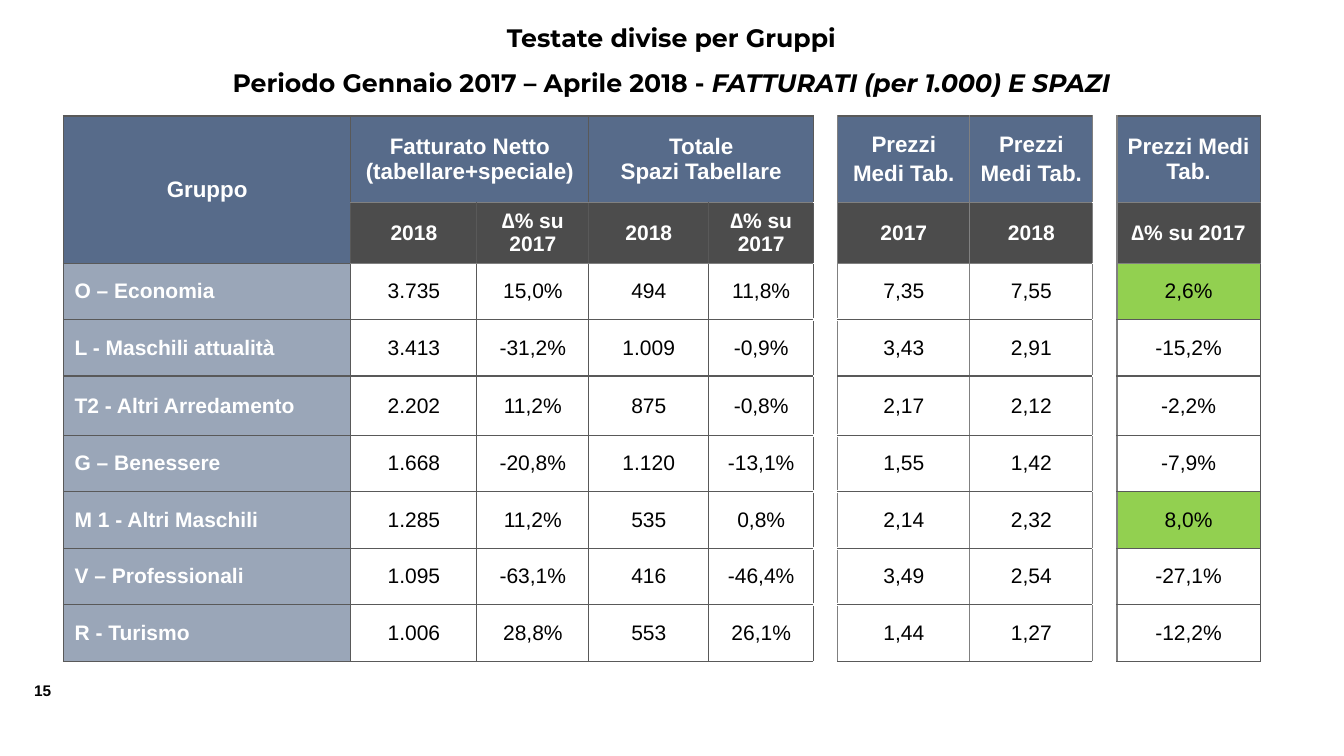
"""Builds the slide with turnover, space and average prices by magazine group."""
from lxml.etree import SubElement
from pptx import Presentation
from pptx.dml.color import RGBColor
from pptx.enum.text import MSO_ANCHOR, PP_ALIGN
from pptx.oxml import parse_xml
from pptx.oxml.ns import nsdecls, qn
from pptx.util import Inches, Pt

BLUE, DARK, GREEN, WHITE, BLACK = "576B8A", "000000", "92D050", "FFFFFF", "000000"
LINE, SOFT_LINE = "595959", "808080"
GAPS = (5, 8)


def style(runs, size, color, bold=True, font="Arial"):
    """Format the given runs."""
    for run in runs:
        run.font.name = font
        run.font.size = Pt(size)
        run.font.bold = bold
        run.font.color.rgb = RGBColor.from_string(color)


def paint(cell, color, opacity=100):
    """Fill a cell, partly transparent if asked."""
    cell.fill.solid()
    cell.fill.fore_color.rgb = RGBColor.from_string(color)
    if opacity < 100:
        tone = cell.fill._xPr.find(qn("a:solidFill"))[0]
        SubElement(tone, qn("a:alpha")).set("val", str(opacity * 1000))


prs = Presentation()
prs.slide_width, prs.slide_height = Inches(13.33), Inches(7.5)
slide = prs.slides.add_slide(prs.slide_layouts[6])

heading = slide.shapes.add_textbox(Inches(1.11), Inches(0.02), Inches(11.1), Inches(1.07)).text_frame
heading.word_wrap = True
heading.text = "Testate divise per Gruppi\nPeriodo Gennaio 2017 – Aprile 2018 - "
heading.paragraphs[1].add_run().text = "FATTURATI (per 1.000) E SPAZI"
for line in heading.paragraphs:
    line.alignment = PP_ALIGN.CENTER
    line.line_spacing = 1.5
    style(line.runs, 18, BLACK, font="Montserrat")
heading.paragraphs[1].runs[1].font.italic = True

page_number = slide.shapes.add_textbox(Inches(0.24), Inches(6.71), Inches(0.42), Inches(0.29)).text_frame
page_number.word_wrap = False
page_number.text = "15"
style(page_number.paragraphs[0].runs, 11, BLACK)

rows = [
    ["Gruppo", "Fatturato Netto (tabellare+speciale)", "", "Totale\nSpazi Tabellare", "", "",
     "Prezzi\nMedi Tab.", "Prezzi\nMedi Tab.", "", "Prezzi Medi Tab."],
    ["", "2018", "∆% su 2017", "2018", "∆% su 2017", "", "2017", "2018", "", "∆% su 2017"],
    ["O – Economia", "3.735", "15,0%", "494", "11,8%", "", "7,35", "7,55", "", "2,6%"],
    ["L - Maschili attualità", "3.413", "-31,2%", "1.009", "-0,9%", "", "3,43", "2,91", "", "-15,2%"],
    ["T2 - Altri Arredamento", "2.202", "11,2%", "875", "-0,8%", "", "2,17", "2,12", "", "-2,2%"],
    ["G – Benessere", "1.668", "-20,8%", "1.120", "-13,1%", "", "1,55", "1,42", "", "-7,9%"],
    ["M 1 - Altri Maschili", "1.285", "11,2%", "535", "0,8%", "", "2,14", "2,32", "", "8,0%"],
    ["V – Professionali", "1.095", "-63,1%", "416", "-46,4%", "", "3,49", "2,54", "", "-27,1%"],
    ["R - Turismo", "1.006", "28,8%", "553", "26,1%", "", "1,44", "1,27", "", "-12,2%"],
]
widths = [2.85, 1.25, 1.11, 1.19, 1.04, 0.24, 1.31, 1.22, 0.24, 1.42]
heights = [0.86, 0.6, 0.56, 0.56, 0.59, 0.56, 0.56, 0.56, 0.56]

table = slide.shapes.add_table(len(rows), len(widths), Inches(0.63), Inches(1.15),
                               Inches(11.86), Inches(5.4)).table
table.first_row = table.horz_banding = False
for column, width in zip(table.columns, widths):
    column.width = Inches(width)
for table_row, height in zip(table.rows, heights):
    table_row.height = Inches(height)
table.cell(0, 0).merge(table.cell(1, 0))
table.cell(0, 1).merge(table.cell(0, 2))
table.cell(0, 3).merge(table.cell(0, 4))

for r, values in enumerate(rows):
    for c, value in enumerate(values):
        cell = table.cell(r, c)
        is_header, is_label, is_gap = r < 2, c == 0, c in GAPS
        cell.vertical_anchor = MSO_ANCHOR.MIDDLE
        if not is_header:
            cell.margin_left = Inches(0.11 if is_label else 0)
            cell.margin_right = cell.margin_top = cell.margin_bottom = 0

        if value:
            cell.text_frame.text = value
        for i, paragraph in enumerate(cell.text_frame.paragraphs):
            paragraph.alignment = PP_ALIGN.LEFT if is_label and not is_header else PP_ALIGN.CENTER
            if i and c > 5:
                paragraph.space_before = Pt(3)
            bold = is_header or is_label
            style(paragraph.runs, 16 if r == 0 else 15, WHITE if bold else BLACK, bold)

        if is_gap:
            paint(cell, WHITE)
        elif r == 0 or is_header and is_label:
            paint(cell, BLUE)
        elif is_header:
            paint(cell, DARK, 70)
        elif is_label:
            paint(cell, BLUE, 60)
        elif c == 9 and not value.startswith("-"):
            paint(cell, GREEN)
        else:
            cell.fill.background()

        borders = []
        for tag, edge in (("lnL", c), ("lnR", c + 1)):
            borders.append((tag, SOFT_LINE if 6 <= edge <= 9 else LINE, 1))
        for tag, edge in (("lnT", r), ("lnB", r + 1)):
            color = WHITE if is_gap else SOFT_LINE if edge in (1, 2) and not is_label else LINE
            borders.append((tag, color, 2.25 if c == 5 and 3 <= edge <= 8 else 1))
        properties = cell._tc.get_or_add_tcPr()
        for i, (tag, color, points) in enumerate(borders):
            properties.insert(i, parse_xml(
                f'<a:{tag} {nsdecls("a")} w="{Pt(points)}"><a:solidFill>'
                f'<a:srgbClr val="{color}"/></a:solidFill></a:{tag}>'))

prs.save("out.pptx")
